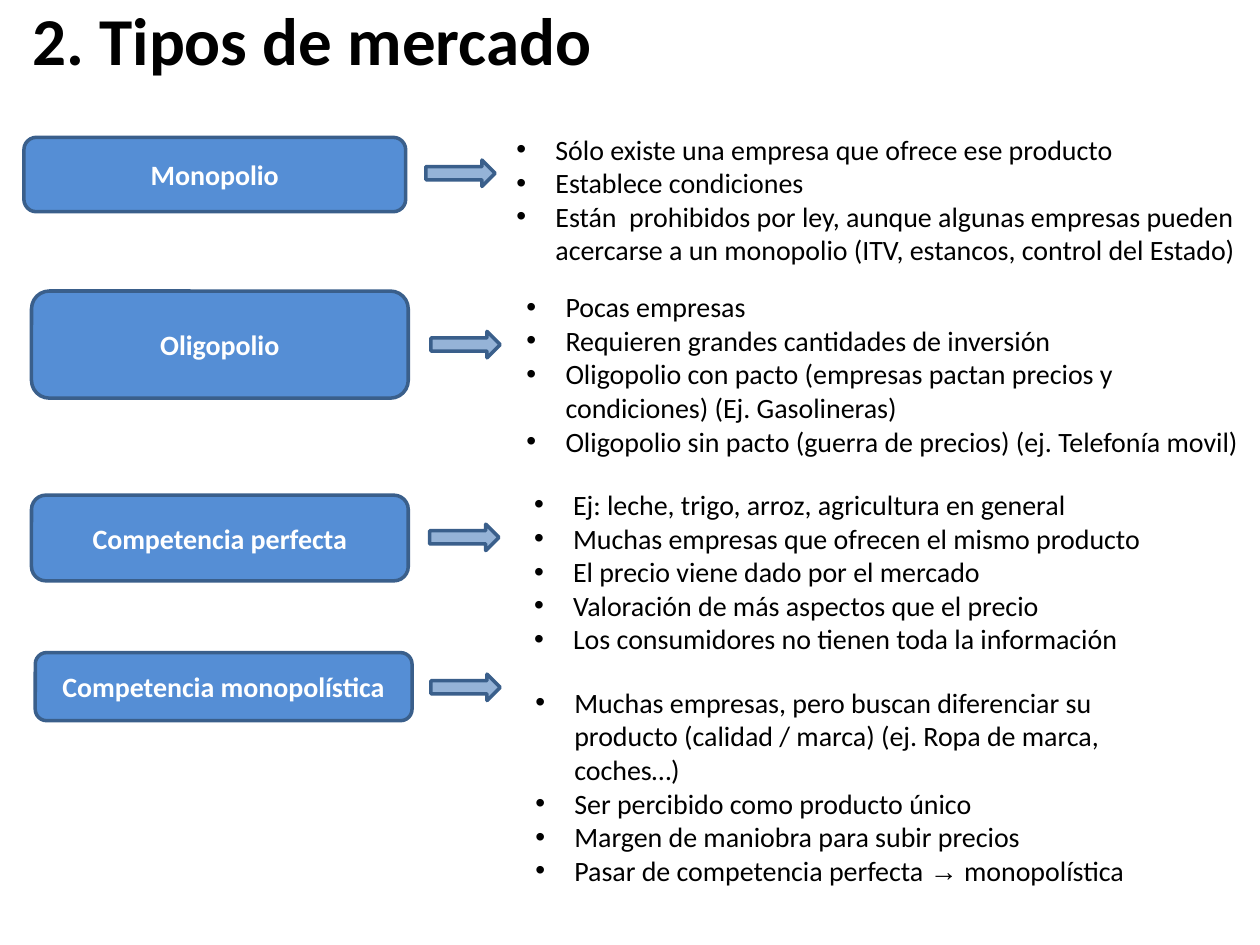
from dataclasses import dataclass

from lxml.etree import SubElement
from pptx import Presentation
from pptx.dml.color import RGBColor
from pptx.enum.shapes import MSO_SHAPE
from pptx.enum.text import MSO_ANCHOR, PP_ALIGN
from pptx.oxml.ns import qn
from pptx.slide import Slide
from pptx.util import Inches, Pt


def color(value):
    return RGBColor.from_string(value)


@dataclass
class MarketSlide:
    slide: Slide
    font_name: str = "Calibri"
    symbol_font: str = "Arial"
    body_size: float = 16
    title_size: float = 38.3
    ink: str = "000000"
    box_fill: str = "558ED5"
    box_text: str = "FFFFFF"
    arrow_fill: str = "95B3D7"
    outline: str = "3A5F8B"
    indent: float = 0.31

    def style(self, paragraph, size, ink, bold=False):
        font = paragraph.font
        font.name = self.font_name
        font.size = Pt(size)
        font.bold = bold
        font.color.rgb = color(ink)

    def text_frame(self, left, top, width, height):
        box = self.slide.shapes.add_textbox(
            Inches(left), Inches(top), Inches(width), Inches(height)
        )
        box.text_frame.word_wrap = True
        return box.text_frame

    def title(self, text, left, top, width, height):
        frame = self.text_frame(left, top, width, height)
        frame.vertical_anchor = MSO_ANCHOR.MIDDLE
        paragraph = frame.paragraphs[0]
        paragraph.text = text
        paragraph.line_spacing = 0.8
        self.style(paragraph, self.title_size, self.ink, bold=True)

    def shape(self, kind, fill, left, top, width, height):
        shape = self.slide.shapes.add_shape(
            kind, Inches(left), Inches(top), Inches(width), Inches(height)
        )
        shape.shadow.inherit = False
        shape.fill.solid()
        shape.fill.fore_color.rgb = color(fill)
        shape.line.color.rgb = color(self.outline)
        shape.line.width = Pt(2)
        return shape

    def market_box(self, text, left, top, width, height):
        shape = self.shape(
            MSO_SHAPE.ROUNDED_RECTANGLE, self.box_fill, left, top, width, height
        )
        frame = shape.text_frame
        frame.word_wrap = True
        frame.vertical_anchor = MSO_ANCHOR.MIDDLE
        paragraph = frame.paragraphs[0]
        paragraph.text = text
        paragraph.alignment = PP_ALIGN.CENTER
        self.style(paragraph, self.body_size, self.box_text, bold=True)

    def arrow(self, left, top):
        self.shape(MSO_SHAPE.RIGHT_ARROW, self.arrow_fill, left, top, 0.55, 0.21)

    def add_bullet(self, paragraph):
        properties = paragraph._p.get_or_add_pPr()
        properties.set("marL", str(Inches(self.indent)))
        properties.set("indent", str(-Inches(self.indent)))
        bullet_color = SubElement(properties, qn("a:buClr"))
        SubElement(bullet_color, qn("a:srgbClr"), val=self.ink)
        SubElement(properties, qn("a:buFont"), typeface=self.symbol_font)
        SubElement(properties, qn("a:buChar"), char="•")

    def bullet_list(self, items, left, top, width, height):
        frame = self.text_frame(left, top, width, height)
        for index, item in enumerate(items):
            paragraph = frame.add_paragraph() if index else frame.paragraphs[0]
            self.add_bullet(paragraph)
            self.style(paragraph, self.body_size, self.ink)
            before, symbol, after = item.partition("→")
            paragraph.add_run().text = before
            if symbol:
                run = paragraph.add_run()
                run.text = symbol
                run.font.name = self.symbol_font
                paragraph.add_run().text = after


MARKETS = [
    (
        "Monopolio", (0.19, 1.09, 3.03, 0.59), (3.38, 1.27), (4, 1, 5.99, 1.16),
        [
            "Sólo existe una empresa que ofrece ese producto",
            "Establece condiciones",
            "Están  prohibidos por ley, aunque algunas empresas pueden "
            "acercarse a un monopolio (ITV, estancos, control del Estado)",
        ],
    ),
    (
        "Oligopolio", (0.25, 2.31, 2.99, 0.85), (3.42, 2.63), (4.08, 2.25, 5.91, 1.45),
        [
            "Pocas empresas",
            "Requieren grandes cantidades de inversión",
            "Oligopolio con pacto (empresas pactan precios y condiciones) "
            "(Ej. Gasolineras)",
            "Oligopolio sin pacto (guerra de precios) (ej. Telefonía movil)",
        ],
    ),
    (
        "Competencia perfecta", (0.25, 3.93, 2.99, 0.68), (3.41, 4.16),
        (4.14, 3.82, 5.06, 1.45),
        [
            "Ej: leche, trigo, arroz, agricultura en general",
            "Muchas empresas que ofrecen el mismo producto",
            "El precio viene dado por el mercado",
            "Valoración de más aspectos que el precio",
            "Los consumidores no tienen toda la información",
        ],
    ),
    (
        "Competencia monopolística", (0.28, 5.18, 2.99, 0.54), (3.42, 5.35),
        (4.15, 5.39, 5.21, 1.71),
        [
            "Muchas empresas, pero buscan diferenciar su producto "
            "(calidad / marca) (ej. Ropa de marca, coches…)",
            "Ser percibido como producto único",
            "Margen de maniobra para subir precios",
            "Pasar de competencia perfecta → monopolística",
        ],
    ),
]


def main():
    presentation = Presentation()
    presentation.slide_width = Inches(10)
    presentation.slide_height = Inches(7.5)
    slide = presentation.slides.add_slide(presentation.slide_layouts[6])
    market_slide = MarketSlide(slide)
    market_slide.title("2. Tipos de mercado", 0.16, 0.05, 9, 0.63)
    for name, box, arrow, area, features in MARKETS:
        market_slide.market_box(name, *box)
        market_slide.arrow(*arrow)
        market_slide.bullet_list(features, *area)
    presentation.save("out.pptx")


if __name__ == "__main__":
    main()
